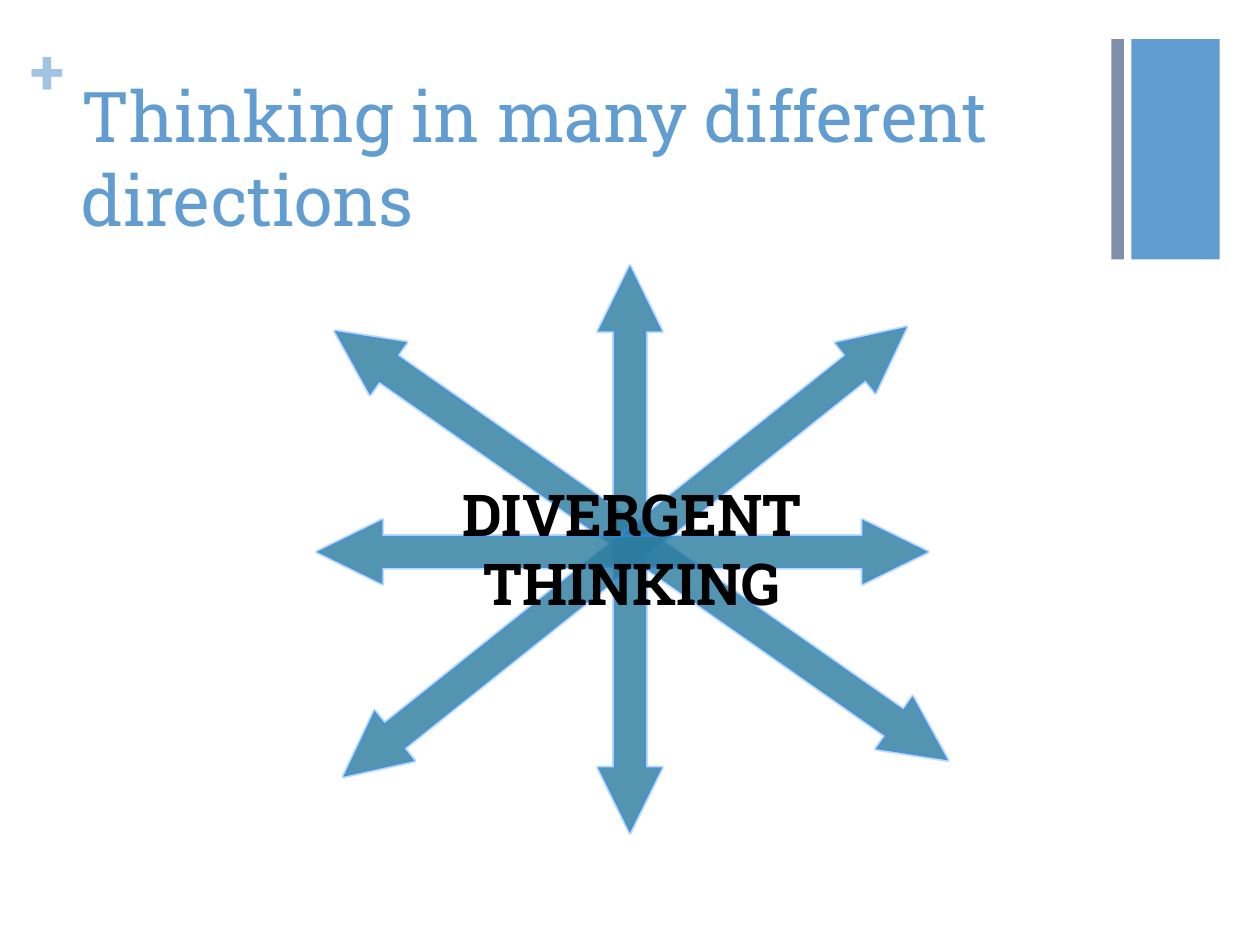
from pptx import Presentation
from pptx.dml.color import RGBColor
from pptx.enum.shapes import MSO_SHAPE
from pptx.enum.text import MSO_ANCHOR, PP_ALIGN
from pptx.oxml.ns import qn
from pptx.util import Inches, Pt
from lxml import etree

RECTANGLE, DOUBLE_ARROW = MSO_SHAPE.RECTANGLE, MSO_SHAPE.LEFT_RIGHT_ARROW
TOP, BOTTOM = MSO_ANCHOR.TOP, MSO_ANCHOR.BOTTOM
LEFT, CENTER = PP_ALIGN.LEFT, PP_ALIGN.CENTER

BLUE = RGBColor(0x62, 0x9D, 0xD1)
PALE_BLUE = RGBColor(0xA1, 0xC4, 0xE3)
SLATE = RGBColor(0x7F, 0x8F, 0xA9)
TEAL = RGBColor(0x2C, 0x7C, 0x9F)
BRIGHT_BLUE = RGBColor(0x3A, 0x93, 0xFF)
BLACK = RGBColor(0, 0, 0)
FONT = "Roboto Slab"

TITLE = ["Thinking in many different directions"]
CENTRE_LABEL = ["DIVERGENT", "THINKING"]

BAR_TOP, BAR_HEIGHT = 0.31, 1.75
BARS = [(8.98, 0.7, BLUE), (8.82, 0.1, SLATE)]

ARROW_THICKNESS = 0.51
ARROWS = [
    (5.09, 4.33, 5.94, 215),
    (5.0, 4.36, 4.5, 270),
    (4.96, 4.38, 5.72, 141.4),
    (4.94, 4.38, 4.85, 0),
]


def set_alpha(fill, percent):
    colour = fill._xPr.find(qn("a:solidFill"))[0]
    etree.SubElement(colour, qn("a:alpha")).set("val", str(percent * 1000))


def add_filled(page, kind, left, top, width, height, colour):
    shape = page.shapes.add_shape(
        kind, Inches(left), Inches(top), Inches(width), Inches(height))
    shape.shadow.inherit = False
    shape.fill.solid()
    shape.fill.fore_color.rgb = colour
    shape.line.fill.background()
    return shape


def add_double_arrow(page, centre_x, centre_y, length, angle):
    arrow = add_filled(
        page, DOUBLE_ARROW, centre_x - length / 2,
        centre_y - ARROW_THICKNESS / 2, length, ARROW_THICKNESS, TEAL)
    arrow.adjustments[0] = 0.5
    arrow.adjustments[1] = 1.02
    arrow.rotation = angle
    set_alpha(arrow.fill, 81)
    arrow.line.width = Pt(2)
    arrow.line.fill.solid()
    arrow.line.fill.fore_color.rgb = BRIGHT_BLUE
    set_alpha(arrow.line.fill, 34)


def add_text(page, area, lines, size, colour, bold=False, align=LEFT,
             anchor=TOP, inset=None):
    box = page.shapes.add_textbox(*(Inches(value) for value in area))
    frame = box.text_frame
    frame.word_wrap = True
    frame.vertical_anchor = anchor
    if inset is not None:
        frame.margin_left = frame.margin_right = Inches(inset)
        frame.margin_top = frame.margin_bottom = Inches(inset)
    para = frame.paragraphs[0]
    para.alignment = align
    for index, line in enumerate(lines):
        if index:
            para.add_line_break()
        span = para.add_run()
        span.text = line
        span.font.name = FONT
        span.font.size = Pt(size)
        span.font.bold = bold
        span.font.color.rgb = colour


def main():
    deck = Presentation()
    deck.slide_width, deck.slide_height = Inches(10), Inches(7.5)
    page = deck.slides.add_slide(deck.slide_layouts[6])

    for left, width, colour in BARS:
        add_filled(page, RECTANGLE, left, BAR_TOP, width, BAR_HEIGHT, colour)
    add_text(page, (0.24, 0.25, 0.29, 0.61), ["+"], 36, PALE_BLUE,
             bold=True, inset=0)
    for arrow in ARROWS:
        add_double_arrow(page, *arrow)
    add_text(page, (2.62, 3.45, 4.79, 1.5), CENTRE_LABEL, 33, BLACK,
             bold=True, align=CENTER, anchor=BOTTOM)
    add_text(page, (0.55, 0.53, 8.26, 1.22), TITLE, 40, BLUE)
    deck.save("out.pptx")


if __name__ == "__main__":
    main()
